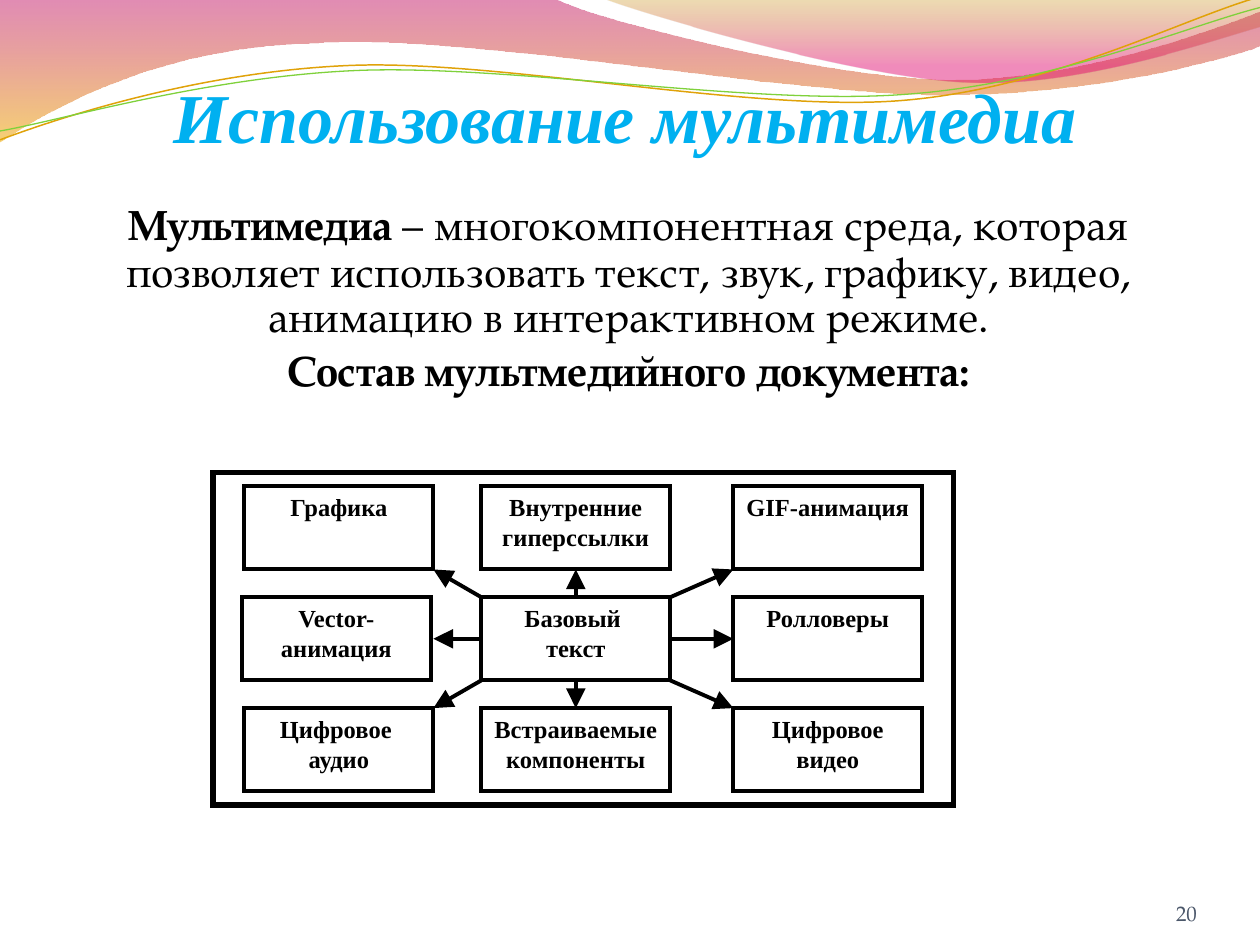
"""Build a slide on multimedia with a diagram of the parts of a multimedia document."""
import math

import pptx
import pptx.dml.color
import pptx.enum.shapes
import pptx.enum.text
import pptx.oxml
import pptx.oxml.ns
import pptx.util

Inches = pptx.util.Inches
Pt = pptx.util.Pt
Align = pptx.enum.text.PP_ALIGN
Anchor = pptx.enum.text.MSO_ANCHOR
RECTANGLE = pptx.enum.shapes.MSO_SHAPE.RECTANGLE
STRAIGHT = pptx.enum.shapes.MSO_CONNECTOR.STRAIGHT
NAMESPACE = pptx.oxml.ns.nsdecls("a")
SERIF, BODY_FONT = "Times New Roman", "TeX Gyre Pagella"
COLORS = {
    "title": "00B0F0", "ink": "000000", "number": "4B576A",
    "magenta": "BD0059", "amber": "F0AB00", "olive": "C38B00", "pink": "E1006B",
    "gold": "E0A209", "green": "7FD13B",
}


def style(font, name, size, color, bold=False, italic=False):
    font.name, font.size, font.bold, font.italic = name, Pt(size), bold, italic
    font.color.rgb = pptx.dml.color.RGBColor.from_string(COLORS[color])


def add_wave(shapes, start, segments, closed):
    builder = shapes.build_freeform(Inches(start[0]), Inches(start[1]), scale=1.0)
    builder.add_line_segments([(Inches(s[-2]), Inches(s[-1])) for s in segments], close=closed)
    wave = builder.convert_to_shape()
    wave.shadow.inherit = False
    lines = list(wave._element.iter(pptx.oxml.ns.qn("a:lnTo")))
    for line, segment in zip(lines, segments):
        if len(segment) == 6:
            points = "".join(
                f'<a:pt x="{Inches(x) - wave.left}" y="{Inches(y) - wave.top}"/>'
                for x, y in zip(segment[::2], segment[1::2]))
            line.getparent().replace(line, pptx.oxml.parse_xml(
                f"<a:cubicBezTo {NAMESPACE}>{points}</a:cubicBezTo>"))
    return wave


deck = pptx.Presentation()
deck.slide_width, deck.slide_height = Inches(10), Inches(7.5)
slide = deck.slides.add_slide(deck.slide_layouts[1])
shapes = slide.shapes
title, definition = shapes.title, slide.placeholders[1]

bands = [
    ((0, 0), [(4.4, -0.01), (4.76, 0.17, 6.64, 0.63, 7.58, 0.63),
              (8.53, 0.63, 9.58, 0.26, 10, 0.09), (10.01, 0.36),
              (9.83, 0.44, 8.7, 0.76, 7.46, 0.75), (6.22, 0.75, 3.82, 0.28, 2.57, 0.34),
              (1.29, 0.36, 0.46, 0.83, -0.01, 1.13)],
     [(0, "magenta", 45), (1, "amber", 55)]),
    ((4.79, -0.01), [(5.09, 0.11, 6.82, 0.62, 7.69, 0.65),
                     (8.56, 0.69, 9.61, 0.32, 10, 0.21), (10, 0)],
     [(0, "olive", 30), (0.8, "pink", 45)]),
]
for start, segments, stops in bands:
    band = add_wave(shapes, start, segments, True)
    band.line.fill.background()
    band.fill.gradient()
    band.fill.gradient_angle = 270
    for stop, (position, color, opacity) in zip(band.fill.gradient_stops, stops):
        stop.position = position
        stop.color.rgb = pptx.dml.color.RGBColor.from_string(COLORS[color])
        tint = stop._gs.find(pptx.oxml.ns.qn("a:srgbClr"))
        tint.append(pptx.oxml.parse_xml(f'<a:alpha {NAMESPACE} val="{opacity * 1000}"/>'))

tilt = -2.7
cosine, sine = math.cos(math.radians(-tilt)), math.sin(math.radians(-tilt))
threads = [
    ([(0, 1.11), (0.48, 0.93, 1.58, 0.57, 2.77, 0.52), (3.95, 0.47, 5.93, 0.89, 7.13, 0.8),
      (8.33, 0.71, 9.38, 0.15, 9.98, -0.02)], 4.99, 0.58, "gold", 0.85),
    ([(0, 1.04), (0.47, 0.96, 1.64, 0.61, 2.83, 0.56), (4.03, 0.51, 5.97, 0.84, 7.17, 0.75),
      (8.36, 0.67, 9.41, 0.21, 10, 0.06)], 5, 0.59, "green", 0.75),
]
for curve, center_x, center_y, color, width in threads:
    level = []
    for segment in curve:
        flat = []
        for x, y in zip(segment[::2], segment[1::2]):
            dx, dy = x - center_x, y - center_y
            flat += [center_x + dx * cosine - dy * sine, center_y + dx * sine + dy * cosine]
        level.append(flat)
    thread = add_wave(shapes, level[0], level[1:], False)
    thread.rotation = tilt
    thread.fill.background()
    thread.line.color.rgb = pptx.dml.color.RGBColor.from_string(COLORS[color])
    thread.line.width = Pt(width)

for placeholder in (title, definition):
    shapes._spTree.append(placeholder._element)

title.left, title.top, title.width, title.height = Inches(1.38), 0, Inches(9), Inches(1.25)
heading = title.text_frame
heading.text = "Использование мультимедиа"
heading.auto_size = pptx.enum.text.MSO_AUTO_SIZE.NONE
heading.vertical_anchor = Anchor.BOTTOM
heading.margin_left = heading.margin_right = heading.margin_bottom = 0
heading.paragraphs[0].alignment = Align.LEFT
style(heading.paragraphs[0].runs[0].font, SERIF, 40, "title", True, True)

definition.left, definition.top = Inches(0.59), Inches(1.55)
definition.width, definition.height = Inches(8.5), Inches(2.12)
explanation = definition.text_frame
explanation.auto_size = pptx.enum.text.MSO_AUTO_SIZE.NONE
sentences = [
    [("\t", 26, False), ("Мультимедиа", 24, True),
     (" – многокомпонентная среда, которая позволяет использовать текст, звук, "
      "графику, видео, анимацию в интерактивном режиме.", 24, False)],
    [("\tСостав мультмедийного документа:", 24, True)],
]
for index, sentence in enumerate(sentences):
    paragraph = explanation.add_paragraph() if index else explanation.paragraphs[0]
    paragraph.alignment = Align.CENTER
    paragraph.line_spacing, paragraph.space_before = 0.9, Pt(5)
    properties = paragraph._p.get_or_add_pPr()
    properties.set("marL", str(Inches(0.3)))
    properties.set("indent", str(Inches(-0.3)))
    properties.append(pptx.oxml.parse_xml(f"<a:buNone {NAMESPACE}/>"))
    for words, size, bold in sentence:
        run = paragraph.add_run()
        run.text = words
        style(run.font, BODY_FONT, size, "ink", bold)

page = shapes.add_textbox(Inches(8.67), Inches(6.95), Inches(0.83), Inches(0.4)).text_frame
page.text, page.word_wrap, page.vertical_anchor = "20", True, Anchor.BOTTOM
page.margin_left = page.margin_top = page.margin_right = page.margin_bottom = 0
page.paragraphs[0].alignment = Align.RIGHT
style(page.paragraphs[0].runs[0].font, BODY_FONT, 12, "number")

components = [
    ["Графика", "Внутренние гиперссылки", "GIF-анимация"],
    ["Vector-анимация", "Базовый \vтекст", "Ролловеры"],
    ["Цифровое \vаудио", "Встраиваемые компоненты", "Цифровое\vвидео"],
]
lefts, first_top, row_step, box_width, box_height = [1.94, 3.82, 5.82], 3.86, 0.88, 1.5, 0.66
black = pptx.dml.color.RGBColor.from_string(COLORS["ink"])
frame = shapes.add_shape(RECTANGLE, Inches(1.69), Inches(3.75), Inches(5.88), Inches(2.64))
boxes = {}
for row, labels in enumerate(components):
    for column, label in enumerate(labels):
        left = 1.92 if (column, row) == (0, 1) else lefts[column]
        box = shapes.add_shape(RECTANGLE, Inches(left), Inches(first_top + row * row_step),
                               Inches(box_width), Inches(box_height))
        box.text_frame.vertical_anchor = Anchor.TOP
        caption = box.text_frame.paragraphs[0]
        caption.text, caption.alignment = label, Align.CENTER
        for run in caption.runs:
            style(run.font, SERIF, 14, "ink", True)
        boxes[column, row] = box

for outline in (frame, *boxes.values()):
    outline.shadow.inherit = False
    outline.fill.background()
    outline.line.color.rgb = black
    outline.line.width = Pt(3 if outline is frame else 2.25)
    outline.line._get_or_add_ln().append(
        pptx.oxml.parse_xml(f'<a:miter {NAMESPACE} lim="800000"/>'))

start_x, end_x = [3.82, 4.57, 5.32], [3.44, 4.57, 5.82]
start_y, end_y = [4.74, 5.07, 5.4], [4.52, 5.07, 5.62]
center_sides = {(1, 0): 0, (0, 1): 1, (1, 2): 2, (2, 1): 3}
for column, row in boxes:
    if (column, row) == (1, 1):
        continue
    arrow = shapes.add_connector(STRAIGHT, Inches(start_x[column]), Inches(start_y[row]),
                                 Inches(end_x[column]), Inches(end_y[row]))
    if (column, row) in center_sides:
        side = center_sides[column, row]
        arrow.begin_connect(boxes[1, 1], side)
        if (column, row) != (0, 1):
            arrow.end_connect(boxes[column, row], (side + 2) % 4)
    arrow.line.color.rgb, arrow.line.width = black, Pt(2.25)
    arrow.line._get_or_add_ln().append(pptx.oxml.parse_xml(
        f'<a:tailEnd {NAMESPACE} type="triangle" w="lg" len="lg"/>'))
    arrow._element.spPr.append(pptx.oxml.parse_xml(f"<a:effectLst {NAMESPACE}/>"))

deck.save("out.pptx")
